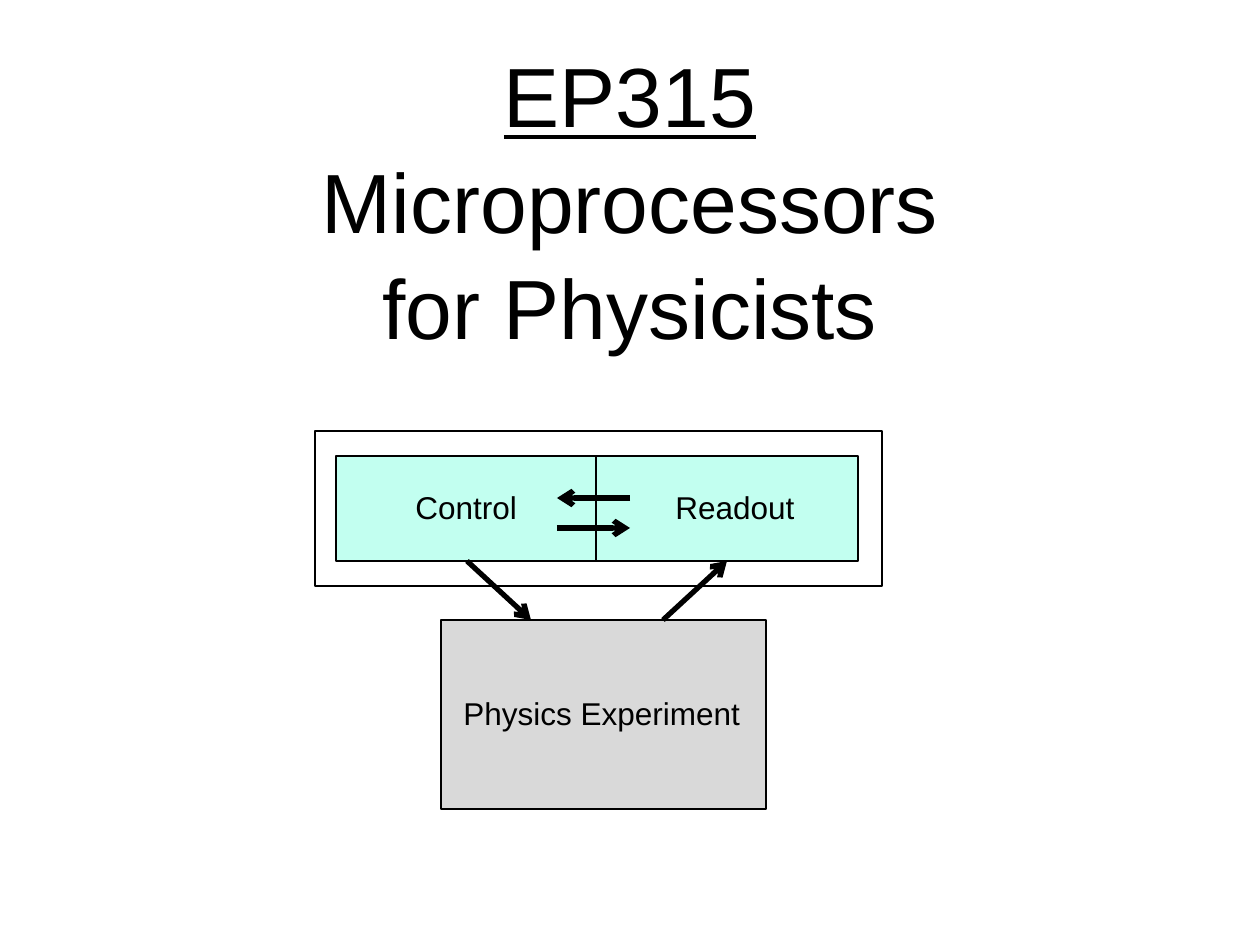
from lxml import etree
from pptx import Presentation
from pptx.dml.color import RGBColor
from pptx.enum.shapes import MSO_CONNECTOR, MSO_SHAPE
from pptx.enum.text import MSO_ANCHOR, MSO_AUTO_SIZE, PP_ALIGN
from pptx.oxml.ns import qn
from pptx.util import Pt

RECTANGLE = MSO_SHAPE.RECTANGLE
STRAIGHT = MSO_CONNECTOR.STRAIGHT
MIDDLE = MSO_ANCHOR.MIDDLE
FIT_SHAPE = MSO_AUTO_SIZE.SHAPE_TO_FIT_TEXT
CENTER = PP_ALIGN.CENTER

EMU_PER_PX = 914400 / 126
BLACK, MINT, GREY = "000000", "C2FFF0", "D9D9D9"
TOP, BOTTOM = 0, 2


def px(*lengths):
    return [round(length * EMU_PER_PX) for length in lengths]


def color(value):
    return RGBColor.from_string(value)


def style(target, **values):
    for name, value in values.items():
        setattr(target, name, value)


def add_run(paragraph, text, size, underline=False):
    run = paragraph.add_run()
    run.text = text
    style(run.font, name="Arial", size=Pt(size), underline=underline)
    run.font.color.rgb = color(BLACK)


def add_title(slide, box, lines):
    """Centre the lines in one paragraph, with the first one underlined."""
    frame = slide.shapes.add_textbox(*px(*box)).text_frame
    style(frame, word_wrap=True, vertical_anchor=MIDDLE)
    paragraph = frame.paragraphs[0]
    style(paragraph, alignment=CENTER, line_spacing=1.05)
    for index, line in enumerate(lines):
        if index:
            paragraph.add_line_break()
        add_run(paragraph, line, 48, underline=index == 0)


def add_box(slide, box, fill=None):
    shape = slide.shapes.add_shape(RECTANGLE, *px(*box))
    shape.shadow.inherit = False
    if fill:
        shape.fill.solid()
        shape.fill.fore_color.rgb = color(fill)
    else:
        shape.fill.background()
    shape.line.color.rgb = color(BLACK)
    shape.line.width = Pt(0.75)
    return shape


def add_label(slide, box, text):
    frame = slide.shapes.add_textbox(*px(*box)).text_frame
    style(frame, word_wrap=False, auto_size=FIT_SHAPE)
    add_run(frame.paragraphs[0], text, 18)


def add_arrow(slide, start, end):
    arrow = slide.shapes.add_connector(STRAIGHT, *px(*start, *end))
    arrow.line.color.rgb = color(BLACK)
    arrow.line.width = Pt(3)
    line = arrow.line._get_or_add_ln()
    etree.SubElement(line, qn("a:tailEnd"), type="arrow")
    etree.SubElement(arrow._element.spPr, qn("a:effectLst"))
    return arrow


def main():
    presentation = Presentation()
    presentation.slide_width, presentation.slide_height = px(1260, 945)
    slide = presentation.slides.add_slide(presentation.slide_layouts[6])

    add_title(slide, (0, 48, 1260, 299),
              ["EP315", "Microprocessors", "for Physicists"])

    add_box(slide, (441, 620, 325, 189), GREY)
    add_label(slide, (451, 688, 305, 50), "Physics Experiment")

    control = add_box(slide, (336, 456, 262, 105), MINT)
    add_label(slide, (403, 482, 129, 50), "Control")
    to_experiment = add_arrow(slide, (467, 561), (531, 620))
    to_experiment.begin_connect(control, BOTTOM)

    readout = add_box(slide, (596, 456, 262, 105), MINT)
    add_label(slide, (663, 482, 146, 50), "Readout")
    from_experiment = add_arrow(slide, (663, 620), (727, 561))
    from_experiment.end_connect(readout, BOTTOM)

    add_arrow(slide, (630, 498), (557, 498))
    add_arrow(slide, (557, 528), (630, 528))
    add_box(slide, (315, 431, 567, 155))

    presentation.save("out.pptx")


if __name__ == "__main__":
    main()
